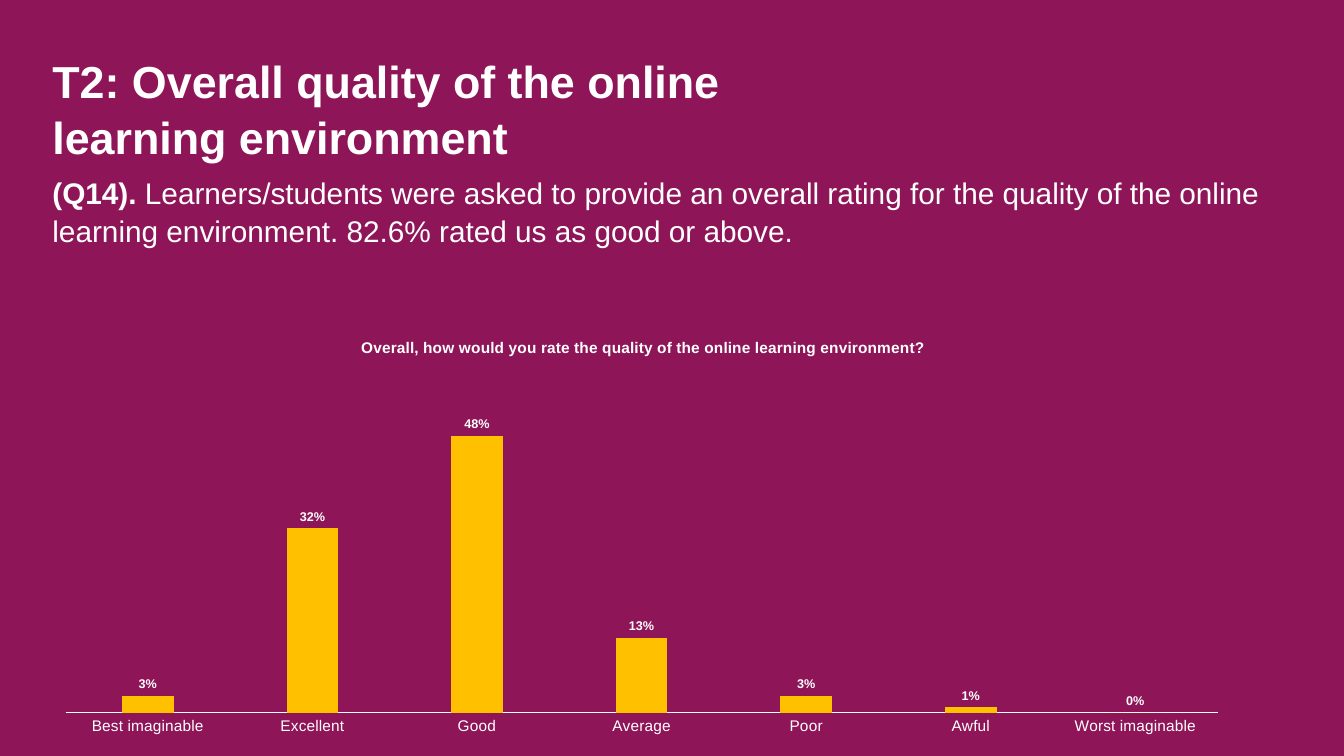
import pptx
import pptx.chart.data
import pptx.dml.color
import pptx.enum.chart
import pptx.enum.text
import pptx.oxml
import pptx.oxml.ns
import pptx.util

HUES = {"plum": "8E1558", "white": "FFFFFF", "gold": "FFC000"}
RATINGS = {
    "Best imaginable": 0.03,
    "Excellent": 0.32,
    "Good": 0.48,
    "Average": 0.13,
    "Poor": 0.03,
    "Awful": 0.01,
    "Worst imaginable": 0,
}


class Deck:
    face = "Arial"

    def __init__(self, wide, high):
        self.prs = pptx.Presentation()
        self.prs.slide_width = pptx.util.Inches(wide)
        self.prs.slide_height = pptx.util.Inches(high)

    def hue(self, name):
        return pptx.dml.color.RGBColor.from_string(HUES[name])

    def paint(self, fill, name):
        fill.solid()
        fill.fore_color.rgb = self.hue(name)

    def page(self, name):
        """Add a title and content slide with a plain background."""
        self.slide = self.prs.slides.add_slide(self.prs.slide_layouts[1])
        self.paint(self.slide.background.fill, name)

    def box(self, x, y, w, h):
        """Turn shares of the slide into lengths."""
        wide, high = self.prs.slide_width, self.prs.slide_height
        return int(x * wide), int(y * high), int(w * wide), int(h * high)

    def font(self, font, size, bold=False):
        font.name = self.face
        font.size = pptx.util.Pt(size)
        font.bold = bold
        font.color.rgb = self.hue("white")

    def text(self, index, area, size, parts):
        """Fill a placeholder with one paragraph of (words, bold) parts."""
        shape = self.slide.placeholders[index]
        shape.left, shape.top, shape.width, shape.height = self.box(*area)
        frame = shape.text_frame
        frame.margin_left = frame.margin_right = 0
        frame.margin_top = frame.margin_bottom = 0
        frame.word_wrap = True
        frame.auto_size = pptx.enum.text.MSO_AUTO_SIZE.NONE
        frame.vertical_anchor = pptx.enum.text.MSO_ANCHOR.TOP
        para = frame.paragraphs[0]
        para.alignment = pptx.enum.text.PP_ALIGN.LEFT
        para.line_spacing = 1.05
        para.space_before = pptx.util.Pt(0)
        props = para._p.get_or_add_pPr()
        props.set("marL", "0")
        props.set("indent", "0")
        props.append(pptx.oxml.parse_xml(
            f'<a:buNone {pptx.oxml.ns.nsdecls("a")}/>'))
        for words, bold in parts:
            run = para.add_run()
            run.text = words
            self.font(run.font, size, bold)

    def pin(self, node, index, inner="", **spots):
        """Fix the place of a chart part, in shares of the chart."""
        for old in node.findall(pptx.oxml.ns.qn("c:layout")):
            node.remove(old)
        target = f'<c:layoutTarget val="{inner}"/>' if inner else ""
        modes = "".join(f'<c:{k}Mode val="edge"/>' for k in "xy")
        sizes = "".join(f'<c:{k} val="{v}"/>' for k, v in spots.items())
        node.insert(index, pptx.oxml.parse_xml(
            f'<c:layout {pptx.oxml.ns.nsdecls("c")}><c:manualLayout>'
            f'{target}{modes}{sizes}</c:manualLayout></c:layout>'))

    def bars(self, area, title, values):
        data = pptx.chart.data.CategoryChartData(number_format="0%")
        data.categories = list(values)
        data.add_series("Series 1", list(values.values()))
        kind = pptx.enum.chart.XL_CHART_TYPE.COLUMN_CLUSTERED
        chart = self.slide.shapes.add_chart(kind, *self.box(*area), data).chart
        self.font(chart.font, 10)
        chart.has_legend = False

        head = chart.chart_title
        head.text_frame.text = title
        self.font(head.text_frame.paragraphs[0].runs[0].font, 11, True)
        head.include_in_layout = False
        self.pin(head._element, 1, x=0.265, y=0.045)
        plots = chart._chartSpace.chart.plotArea
        self.pin(plots, 0, "inner", x=0.021, y=0.122, w=0.96, h=0.806)

        scale = chart.value_axis
        scale.minimum_scale, scale.maximum_scale = 0, 0.6
        scale.has_major_gridlines = False
        scale.visible = False
        base = chart.category_axis
        base.major_tick_mark = pptx.enum.chart.XL_TICK_MARK.NONE
        base.format.line.color.rgb = self.hue("white")
        base.format.line.width = pptx.util.Pt(0.75)
        self.font(base.tick_labels.font, 11)

        plot = chart.plots[0]
        plot.vary_by_categories = False
        plot.gap_width, plot.overlap = 219, -27
        self.paint(plot.series[0].format.fill, "gold")
        plot.has_data_labels = True
        tags = plot.data_labels
        tags.show_value = True
        tags.number_format = "0%"
        tags.number_format_is_linked = False
        tags.position = pptx.enum.chart.XL_LABEL_POSITION.OUTSIDE_END
        self.font(tags.font, 9, True)


def main():
    deck = Deck(13.33, 7.5)
    deck.page("plum")
    left = 0.039
    deck.text(0, (left, 0.067, 0.607, 0.15), 32, [
        ("T2: Overall quality of the online learning environment", True)])
    deck.text(1, (left, 0.229, 0.908, 0.18), 21.3, [
        ("(Q14). ", True),
        ("Learners/students were asked to provide an overall rating for the "
         "quality of the online learning environment. 82.6% rated us as good "
         "or above.", False)])
    deck.bars(
        (0.03, 0.416, 0.893, 0.568),
        "Overall, how would you rate the quality of the online learning "
        "environment?",
        RATINGS)
    deck.prs.save("out.pptx")


if __name__ == "__main__":
    main()
